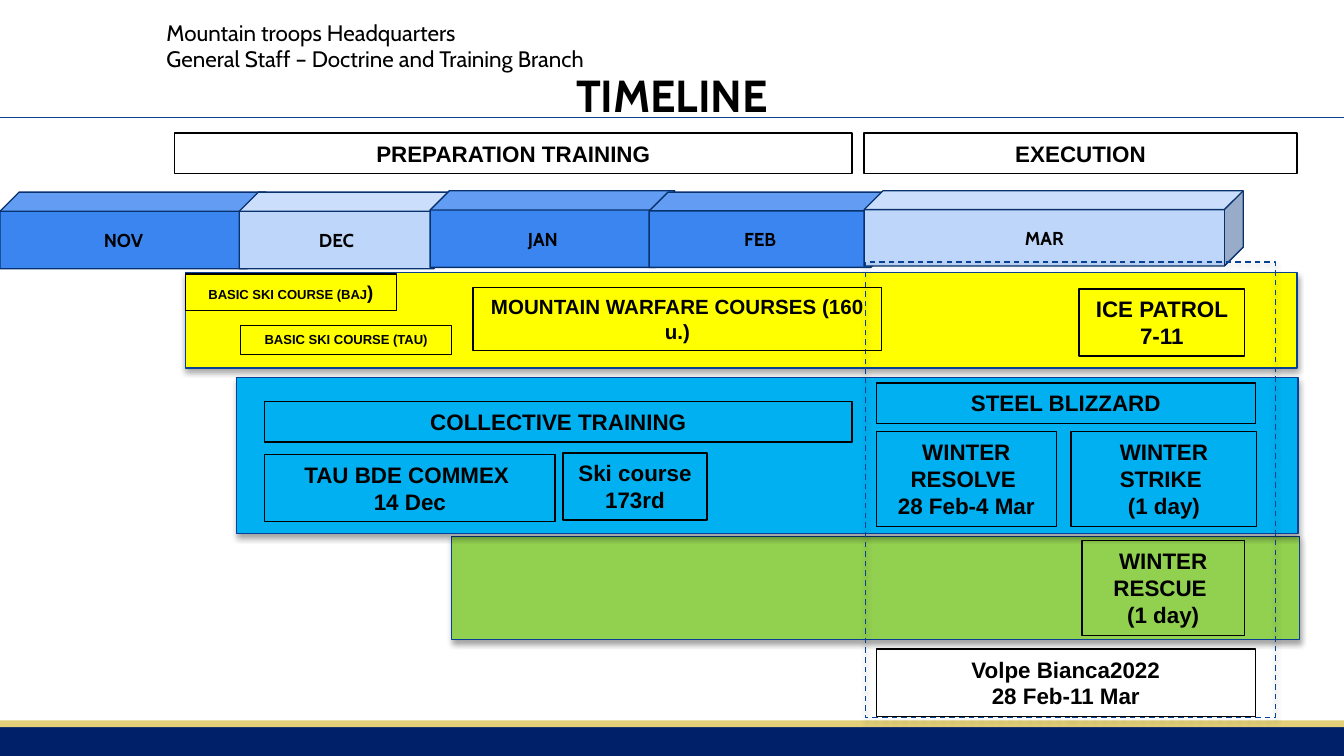
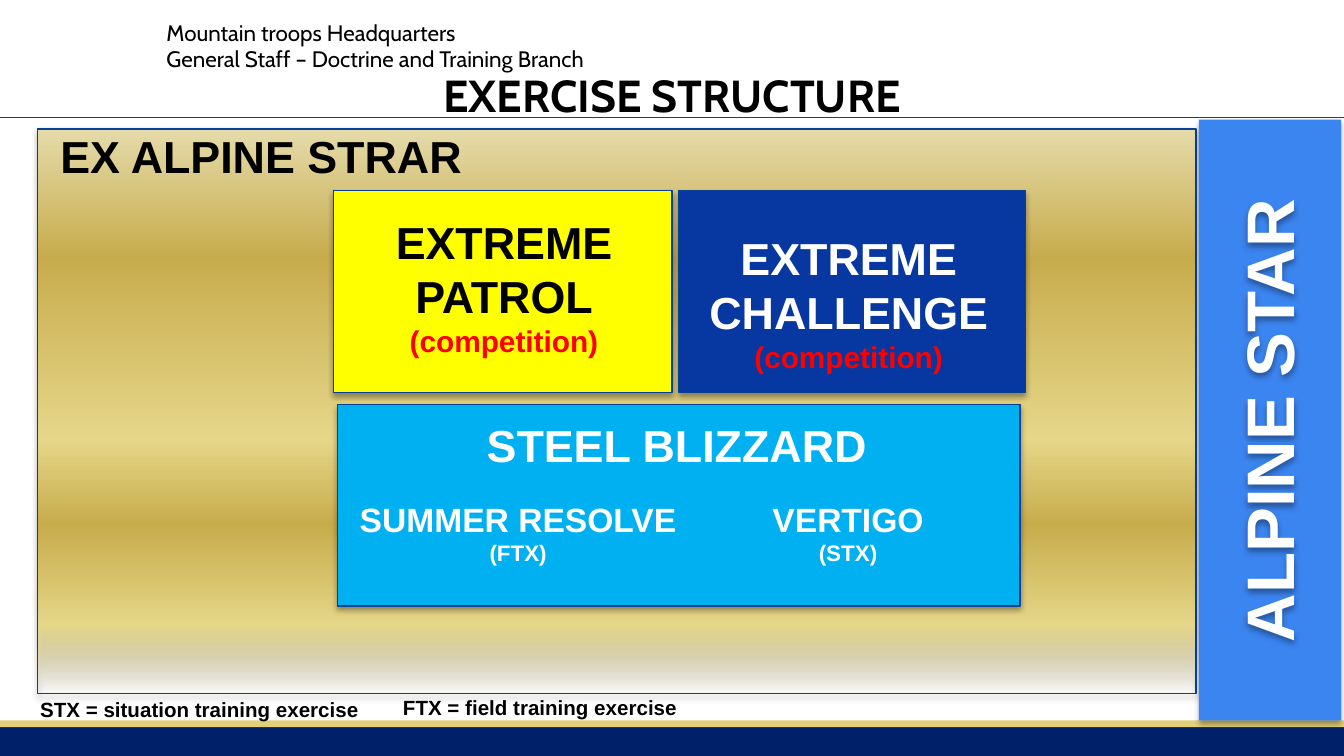
"""Build the winter exercise timeline and exercise structure slides."""
from pptx import Presentation
from pptx.dml.color import RGBColor
from pptx.enum import dml, shapes, text
from pptx.oxml import parse_xml
from pptx.oxml.ns import nsdecls, qn
from pptx.oxml.xmlchemy import OxmlElement
from pptx.util import Inches, Pt

BLACK = RGBColor(0x00, 0x00, 0x00)
WHITE = RGBColor(0xFF, 0xFF, 0xFF)
RED = RGBColor(0xFF, 0x00, 0x00)
NAVY = RGBColor(0x00, 0x21, 0x69)
GOLD = RGBColor(0xE4, 0xD0, 0x79)
RULE_BLUE = RGBColor(0x0B, 0x43, 0x95)
EDGE_BLUE = RGBColor(0x07, 0x41, 0x95)
CUBE_EDGE = RGBColor(0x08, 0x32, 0x6E)
BLUE = RGBColor(0x3B, 0x85, 0xF1)
PALE_BLUE = RGBColor(0xBE, 0xD6, 0xFA)
DEEP_BLUE = RGBColor(0x07, 0x37, 0xA1)
SKY = RGBColor(0x00, 0xB0, 0xF0)
YELLOW = RGBColor(0xFF, 0xFF, 0x00)
GREEN = RGBColor(0x92, 0xD0, 0x50)
GOLD_STOPS = [(0, "E6DCAC", 0), (12, "E6D78A", 100), (30, "C7AC4C", 100),
              (45, "E6D78A", 100), (77, "C7AC4C", 100), (100, "E6DCAC", 100)]

HEADER = "Mountain troops Headquarters\nGeneral Staff – Doctrine and Training Branch"
FOOTER_BANDS = [((-0.01, 5.37, 10.02, 0.27), NAVY), ((-0.01, 5.36, 10.02, 0.05), GOLD)]

PHASE_BANDS = [
    ((3.36, 3.99, 6.31, 0.77), GREEN),
    ((1.38, 2.03, 8.27, 0.71), YELLOW),
    ((1.76, 2.81, 7.9, 1.16), SKY),
]
MONTHS = [
    ("NOV", (0, 1.43, 1.98, 0.57), BLUE),
    ("DEC", (1.78, 1.43, 1.59, 0.57), PALE_BLUE),
    ("JAN", (3.2, 1.42, 1.82, 0.57), BLUE),
    ("FEB", (4.83, 1.43, 1.79, 0.56), BLUE),
    ("MAR", (6.43, 1.42, 2.82, 0.56), PALE_BLUE),
]
EXECUTION_WINDOW = (6.44, 1.95, 3.05, 3.39)
ACTIVITIES = [
    ((1.3, 0.99, 5.04, 0.3), [[("PREPARATION TRAINING", 12)]]),
    ((6.43, 0.99, 3.22, 0.3), [[("EXECUTION", 12)]]),
    ((1.38, 2.04, 1.57, 0.27), [[("BASIC SKI COURSE (BAJ", 7), (")", 10)]]),
    ((1.79, 2.42, 1.57, 0.22), [[("BASIC SKI COURSE (TAU)", 7)]]),
    ((3.52, 2.14, 3.04, 0.47), [[("MOUNTAIN WARFARE COURSES (160 u.)", 11)]]),
    ((8.03, 2.15, 1.23, 0.5), [[("ICE PATROL 7-11", 12)]]),
    ((1.97, 2.99, 4.37, 0.3), [[("COLLECTIVE TRAINING", 12)]]),
    ((1.97, 3.38, 2.16, 0.5), [[("TAU BDE COMMEX \n14 Dec", 12)]]),
    ((4.19, 3.37, 1.07, 0.5), [[("Ski course 173rd", 12)]]),
    ((6.52, 2.85, 2.82, 0.3), [[("STEEL BLIZZARD", 12)]]),
    ((6.52, 3.21, 1.34, 0.71), [[("WINTER RESOLVE \n28 Feb-4 Mar", 12)]]),
    ((7.97, 3.21, 1.38, 0.71), [[("WINTER STRIKE ", 12)], [("(1 day)", 12)]]),
    ((8.05, 4.02, 1.21, 0.71), [[("WINTER RESCUE ", 12)], [("(1 day)", 12)]]),
    ((6.52, 4.83, 2.82, 0.5), [[("Volpe Bianca2022", 12)], [("28 Feb-11 Mar", 12)]]),
]

EXERCISE_FIELD = (0.28, 0.96, 8.62, 4.2)
EXERCISE_PANELS = [
    ((2.48, 1.42, 2.52, 1.5), YELLOW),
    ((5.05, 1.42, 2.58, 1.5), DEEP_BLUE),
    ((2.51, 3.01, 5.08, 1.5), SKY),
]
CENTRED_NOTES = [
    ((2.49, 1.55, 2.52, 1.18), [[("EXTREME PATROL", 24)], [("(competition)", 16, RED)]]),
    ((5.01, 1.67, 2.61, 1.18),
     [[("EXTREME CHALLENGE", 24, WHITE)], [("(competition)", 16, RED)]]),
    ((3.5, 3.06, 3.07, 0.5), [[("STEEL BLIZZARD", 24, WHITE)]]),
    ((2.52, 3.66, 2.67, 0.61), [[("SUMMER RESOLVE", 18, WHITE)], [("(FTX)", 12, WHITE)]]),
    ((5.05, 3.66, 2.52, 0.61), [[("VERTIGO", 18, WHITE)], [("(STX)", 12, WHITE)]]),
]
LEFT_NOTES = [
    ((0.35, 0.91, 6.38, 0.5), [[("EX ALPINE STRAR", 24)]]),
    ((0.2, 5.14, 2.68, 0.29), [[("STX = situation training exercise", 11)]]),
    ((2.9, 5.12, 2.28, 0.29), [[("FTX = field training exercise", 11)]]),
]
SIDE_BAND = (8.92, 0.89, 1.06, 4.47)
SIDE_LABEL = (7.07, 2.93, 4.72, 0.4)


def inches(place):
    return [Inches(length) for length in place]


def write(shape, paragraphs, font="Arial", bold=True, centred=True, middle=False, grow=False):
    frame = shape.text_frame
    frame.word_wrap = True
    frame.auto_size = (text.MSO_AUTO_SIZE.SHAPE_TO_FIT_TEXT if grow
                       else text.MSO_AUTO_SIZE.NONE)
    frame.vertical_anchor = text.MSO_ANCHOR.MIDDLE if middle else text.MSO_ANCHOR.TOP
    for index, runs in enumerate(paragraphs):
        paragraph = frame.add_paragraph() if index else frame.paragraphs[0]
        paragraph.alignment = text.PP_ALIGN.CENTER if centred else text.PP_ALIGN.LEFT
        for words, size, *color in runs:
            for number, line in enumerate(words.split("\n")):
                if number:
                    paragraph.add_line_break()
                run = paragraph.add_run()
                run.text = line
                run.font.name, run.font.size, run.font.bold = font, Pt(size), bold
                run.font.color.rgb = color[0] if color else BLACK


def cast_shadow(shape):
    shape.shadow.inherit = False
    shape.element.spPr.find(qn("a:effectLst")).append(parse_xml(
        f'<a:outerShdw {nsdecls("a")} blurRad="{Pt(3.1)}" dist="{Pt(1.8)}" dir="5400000" '
        'rotWithShape="0"><a:srgbClr val="000000"><a:alpha val="35000"/></a:srgbClr>'
        '</a:outerShdw>'))


def add_box(parent, place, fill=None, edge=None, kind=shapes.MSO_SHAPE.RECTANGLE, shadow=False):
    box = parent.shapes.add_shape(kind, *inches(place))
    box.shadow.inherit = False
    if fill is None:
        box.fill.background()
    else:
        box.fill.solid()
        box.fill.fore_color.rgb = fill
    if edge is None:
        box.line.fill.background()
    else:
        box.line.color.rgb = edge
        box.line.width = Pt(0.75)
    if shadow:
        cast_shadow(box)
    return box


def add_note(parent, place, paragraphs, **style):
    note = parent.shapes.add_textbox(*inches(place))
    write(note, paragraphs, **style)
    return note


def fill_gold(box):
    stops = "".join(
        f'<a:gs pos="{position * 1000}"><a:srgbClr val="{color}">'
        f'<a:alpha val="{alpha * 1000}"/></a:srgbClr></a:gs>'
        for position, color, alpha in GOLD_STOPS)
    properties = box.element.spPr
    properties.replace(properties.find(qn("a:noFill")), parse_xml(
        f'<a:gradFill {nsdecls("a")} rotWithShape="1"><a:gsLst>{stops}</a:gsLst>'
        '<a:lin ang="16200000" scaled="0"/></a:gradFill>'))


def furnish_layout(layout, slide):
    for placeholder in list(layout.placeholders)[1:]:
        placeholder.element.getparent().remove(placeholder.element)
    furniture = [add_box(slide, place, color) for place, color in FOOTER_BANDS]
    furniture.append(add_note(slide, (1.14, 0.09, 4.59, 0.79), [[(HEADER, 12)]],
                              font="Cabin", bold=False, centred=False))
    for part in furniture:
        layout.shapes.element.append(part.element)


def add_heading(slide, words):
    title = slide.shapes.title
    title.left, title.top, title.width, title.height = inches((1.26, 0.43, 7.48, 0.53))
    write(title, [[(words, 24)]], font="Cabin")
    frame = title.text_frame
    frame.margin_left = frame.margin_right = Inches(0.13)
    frame.margin_top = frame.margin_bottom = Inches(0.07)
    rule = slide.shapes.add_connector(shapes.MSO_CONNECTOR.STRAIGHT,
                                      *inches((0, 0.87, 10, 0.87)))
    rule.line.color.rgb = RULE_BLUE
    rule.line.width = Pt(0.25)
    rule.element.spPr.append(OxmlElement("a:effectLst"))


def build_timeline(slide):
    add_heading(slide, "TIMELINE")
    for place, color in PHASE_BANDS:
        add_box(slide, place, color, EDGE_BLUE, shadow=True)
    calendar = slide.shapes.add_group_shape()
    for month, place, color in MONTHS:
        cube = add_box(calendar, place, color, CUBE_EDGE, shapes.MSO_SHAPE.CUBE)
        write(cube, [[(month, 10)]], font="Cabin", middle=True)
    window = add_box(slide, EXECUTION_WINDOW, edge=EDGE_BLUE, shadow=True)
    window.line.dash_style = dml.MSO_LINE.DASH
    for place, paragraphs in ACTIVITIES:
        write(add_box(slide, place, edge=BLACK), paragraphs, grow=True)


def build_structure(slide):
    add_heading(slide, "EXERCISE STRUCTURE")
    fill_gold(add_box(slide, EXERCISE_FIELD, edge=EDGE_BLUE, shadow=True))
    for place, color in EXERCISE_PANELS:
        add_box(slide, place, color, EDGE_BLUE, shadow=True)
    for place, paragraphs in CENTRED_NOTES:
        add_note(slide, place, paragraphs, grow=True)
    for place, paragraphs in LEFT_NOTES:
        add_note(slide, place, paragraphs, centred=False, grow=True)
    side = slide.shapes.add_group_shape()
    add_box(side, SIDE_BAND, BLUE, shadow=True)
    label = add_note(side, SIDE_LABEL, [[("ALPINE STAR", 36, WHITE)]], middle=True)
    label.rotation = 270
    cast_shadow(label)


def main():
    deck = Presentation()
    deck.slide_width = Inches(10)
    deck.slide_height = deck.slide_width * 9 // 16
    layout = deck.slide_layouts[5]
    timeline, structure = (deck.slides.add_slide(layout) for _ in range(2))
    furnish_layout(layout, timeline)
    build_timeline(timeline)
    build_structure(structure)
    deck.save("out.pptx")


if __name__ == "__main__":
    main()
